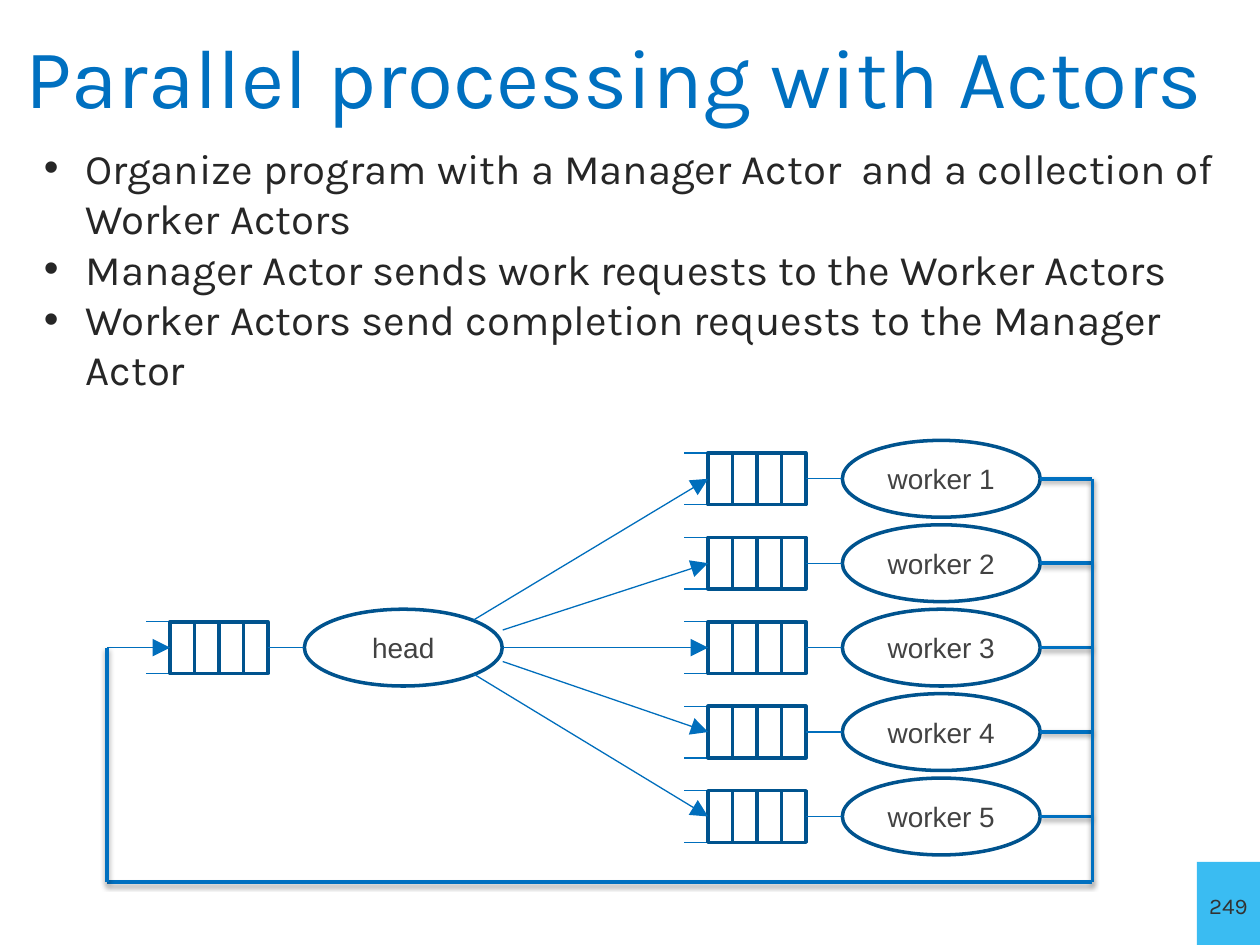
from lxml.etree import SubElement
from pptx import Presentation
from pptx.dml.color import RGBColor
from pptx.enum.shapes import MSO_CONNECTOR, MSO_SHAPE
from pptx.enum.text import MSO_ANCHOR, MSO_AUTO_SIZE, PP_ALIGN
from pptx.oxml.ns import qn
from pptx.util import Inches, Pt

COLORS = {
    "title": "0070C0",
    "body": "262626",
    "label": "424242",
    "number": "323232",
    "number_tile": "3ABCF2",
    "outline": "00538E",
    "arrow": "006EBC",
    "return_path": "0070C0",
}

BULLETS = [
    "Organize program with a Manager Actor  and a collection of Worker Actors",
    "Manager Actor sends work requests to the Worker Actors",
    "Worker Actors send completion requests to the Manager Actor",
]

# The slide is a grid of 100 columns by 75 rows
CELL = Inches(10) // 100
WORKER_ROWS = [38 + 6.7 * lane for lane in range(5)]
HEAD_ROW = WORKER_ROWS[2]
HEAD_QUEUE, WORKER_QUEUE = 13.5, 56.2
SLOT_WIDTH, SLOT_HEIGHT, SLOTS = 1.94, 4.1, 4
QUEUE_WIDTH = SLOT_WIDTH * SLOTS
RAIL_OVERHANG = 1.9
LINK = 2.9
ACTOR_WIDTH, ACTOR_HEIGHT = 15.7, 6.1
ACTOR_OFFSET = QUEUE_WIDTH + LINK
SEND_POINTS = [(37.6, 49.2), (39.9, 50), (39.9, HEAD_ROW), (39.9, 52.5), (37.6, 53.5)]
RETURN_LEFT, RETURN_RIGHT, RETURN_ROW = 8.5, 86.7, 70


def grid(*cells):
    return [round(cell * CELL) for cell in cells]


def color(name):
    return RGBColor.from_string(COLORS[name])


def set_font(font, name, size, color_name):
    font.name = name
    font.size = Pt(size)
    font.color.rgb = color(color_name)


def add_line(shapes, start, end, color_name="arrow", width=0.75, arrow=False, shadow=False):
    line = shapes.add_connector(MSO_CONNECTOR.STRAIGHT, *grid(*start, *end))
    line.line.color.rgb = color(color_name)
    line.line.width = Pt(width)
    properties = line._element.spPr
    if arrow:
        SubElement(properties.find(qn("a:ln")), qn("a:tailEnd"), type="triangle", w="lg", len="lg")
    effects = SubElement(properties, qn("a:effectLst"))
    if shadow:
        outer = SubElement(effects, qn("a:outerShdw"), blurRad=str(Pt(3.1)),
                           dist=str(Pt(1.6)), dir="5400000", rotWithShape="0")
        black = SubElement(outer, qn("a:srgbClr"), val="000000")
        SubElement(black, qn("a:alpha"), val="38000")


def add_outline(shapes, kind, left, top, width, height):
    shape = shapes.add_shape(kind, *grid(left, top, width, height))
    shape.shadow.inherit = False
    shape.fill.background()
    shape.line.color.rgb = color("outline")
    shape.line.width = Pt(2)
    return shape


def add_actor(slide, left, row, label):
    """Draw a mailbox queue linked to an actor, centred on a row."""
    shapes = slide.shapes.add_group_shape().shapes
    top = row - SLOT_HEIGHT / 2
    right = left + QUEUE_WIDTH

    # Mailbox
    for rail in (top, top + SLOT_HEIGHT):
        add_line(shapes, (left - RAIL_OVERHANG, rail), (right, rail))
    for slot in range(SLOTS):
        add_outline(shapes, MSO_SHAPE.RECTANGLE, left + slot * SLOT_WIDTH, top,
                    SLOT_WIDTH, SLOT_HEIGHT)

    # Actor
    actor = add_outline(shapes, MSO_SHAPE.OVAL, left + ACTOR_OFFSET,
                        row - ACTOR_HEIGHT / 2, ACTOR_WIDTH, ACTOR_HEIGHT)
    frame = actor.text_frame
    frame.vertical_anchor = MSO_ANCHOR.MIDDLE
    paragraph = frame.paragraphs[0]
    paragraph.text = label
    paragraph.alignment = PP_ALIGN.CENTER
    set_font(paragraph.font, "Arial", 16, "label")
    add_line(shapes, (right, row), (left + ACTOR_OFFSET, row))


def add_title(slide, text):
    title = slide.shapes.title
    title.left, title.top, title.width, title.height = grid(1, 1.1, 98, 9.7)
    frame = title.text_frame
    frame.auto_size = MSO_AUTO_SIZE.NONE
    frame.vertical_anchor = MSO_ANCHOR.MIDDLE
    paragraph = frame.paragraphs[0]
    paragraph.text = text
    paragraph.alignment = PP_ALIGN.LEFT
    set_font(paragraph.font, "Karla", 48, "title")


def add_bullets(slide, items):
    frame = slide.shapes.add_textbox(*grid(2.5, 10.8, 95, 62.8)).text_frame
    frame.word_wrap = True
    for index, item in enumerate(items):
        paragraph = frame.add_paragraph() if index else frame.paragraphs[0]
        paragraph.text = item
        properties = paragraph._p.get_or_add_pPr()
        properties.set("marL", str(Inches(0.33)))
        properties.set("indent", str(-Inches(0.33)))
        SubElement(properties, qn("a:buFont"), typeface="Arial")
        SubElement(properties, qn("a:buChar"), char="•")
        set_font(paragraph.font, "Karla", 24, "body")


def add_slide_number(slide, number):
    area = grid(95, 68.4, 5, 6.6)
    tile = slide.shapes.add_shape(MSO_SHAPE.RECTANGLE, *area)
    tile.shadow.inherit = False
    tile.fill.solid()
    tile.fill.fore_color.rgb = color("number_tile")
    tile.line.fill.background()

    # Without side margins the number fits the tile on one line
    frame = slide.shapes.add_textbox(*area).text_frame
    frame.word_wrap = False
    frame.margin_left = frame.margin_right = 0
    frame.vertical_anchor = MSO_ANCHOR.MIDDLE
    paragraph = frame.paragraphs[0]
    paragraph.alignment = PP_ALIGN.CENTER
    run = paragraph.add_run()
    run.text = number
    run._r.get_or_add_rPr().set("cap", "small")
    set_font(run.font, "Karla", 16, "number")


def add_return_path(slide):
    """Lead every worker back to the mailbox of the head."""
    worker_right = WORKER_QUEUE + ACTOR_OFFSET + ACTOR_WIDTH
    segments = [((worker_right, row), (RETURN_RIGHT, row)) for row in WORKER_ROWS]
    segments += [
        ((RETURN_RIGHT, WORKER_ROWS[0]), (RETURN_RIGHT, RETURN_ROW)),
        ((RETURN_LEFT, RETURN_ROW), (RETURN_RIGHT, RETURN_ROW)),
        ((RETURN_LEFT, HEAD_ROW), (RETURN_LEFT, RETURN_ROW)),
    ]
    for start, end in segments:
        add_line(slide.shapes, start, end, "return_path", 2, shadow=True)


def main():
    presentation = Presentation()
    presentation.slide_width, presentation.slide_height = grid(100, 75)
    slide = presentation.slides.add_slide(presentation.slide_layouts[5])

    # Text
    add_title(slide, "Parallel processing with Actors")
    add_bullets(slide, BULLETS)
    add_slide_number(slide, "249")

    # Head and workers
    add_actor(slide, HEAD_QUEUE, HEAD_ROW, "head")
    add_line(slide.shapes, (RETURN_LEFT, HEAD_ROW), (HEAD_QUEUE, HEAD_ROW), arrow=True)
    for number, (row, start) in enumerate(zip(WORKER_ROWS, SEND_POINTS), 1):
        add_actor(slide, WORKER_QUEUE, row, f"worker {number}")
        add_line(slide.shapes, start, (WORKER_QUEUE, row), arrow=True)
    add_return_path(slide)

    presentation.save("out.pptx")


if __name__ == "__main__":
    main()
